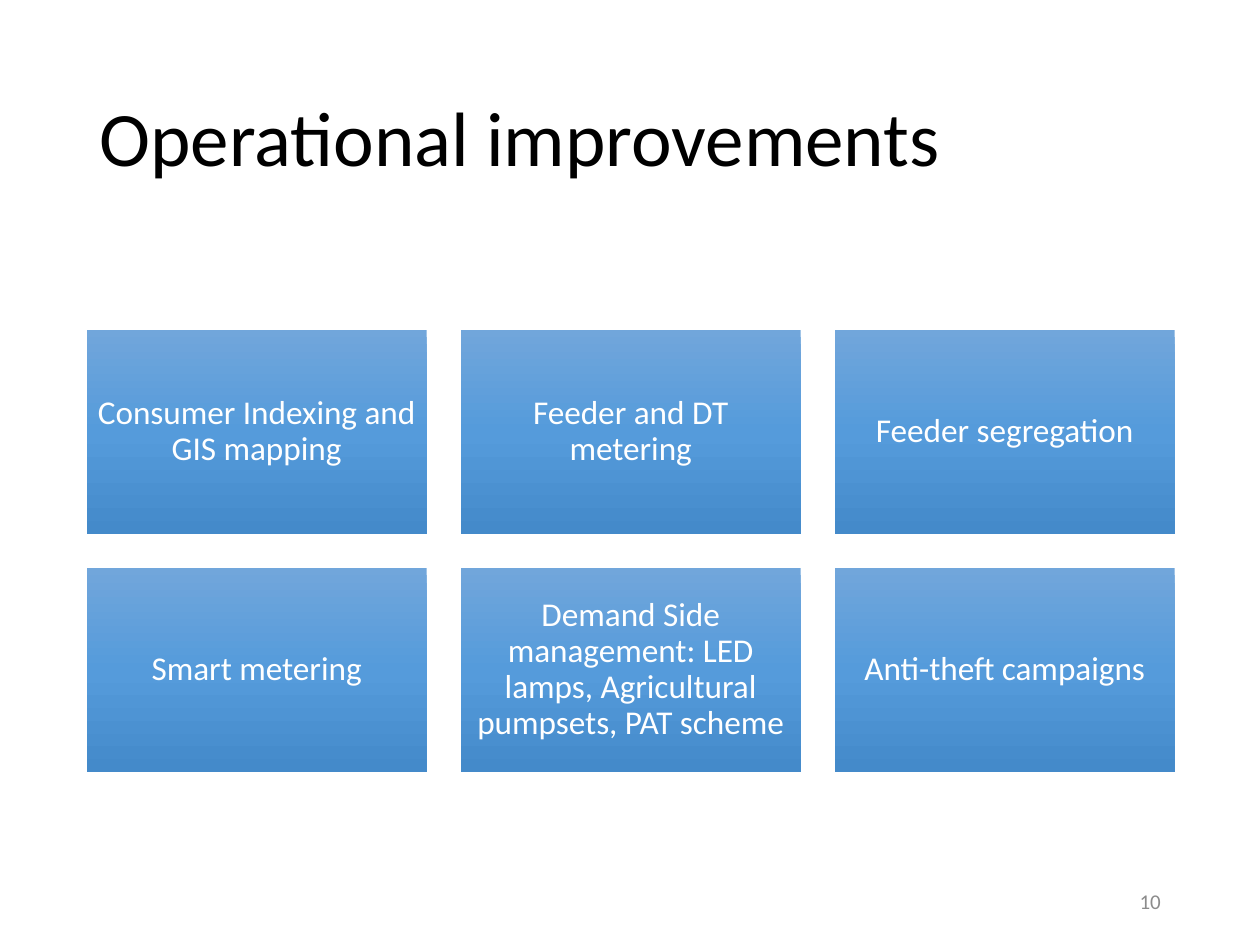
from copy import deepcopy

from pptx import Presentation
from pptx.dml.color import RGBColor
from pptx.enum.shapes import MSO_SHAPE
from pptx.enum.text import MSO_ANCHOR, PP_ALIGN
from pptx.oxml.ns import qn
from pptx.util import Cm, Pt

RECTANGLE = MSO_SHAPE.RECTANGLE
MIDDLE = MSO_ANCHOR.MIDDLE
LEFT, CENTER, RIGHT = PP_ALIGN.LEFT, PP_ALIGN.CENTER, PP_ALIGN.RIGHT

MEASURES = [
    ["Consumer Indexing and GIS mapping", "Feeder and DT metering", "Feeder segregation"],
    [
        "Smart metering",
        "Demand Side management: LED lamps, Agricultural pumpsets, PAT scheme",
        "Anti-theft campaigns",
    ],
]
GRADIENT = [(0, "71A6DB"), (0.5, "559BDB"), (1, "448ACA")]
GRID_LEFT, GRID_TOP = 1.75, 6.65
BOX_WIDTH, BOX_HEIGHT, GAP = 6.85, 4.11, 0.69
INSET = Cm(0.2)


def color(hex_string):
    return RGBColor.from_string(hex_string)


def write(shape, text, size, hex_string, alignment, line_spacing=1.0, **frame_format):
    frame = shape.text_frame
    frame.text = text
    frame_values = {"word_wrap": True, "vertical_anchor": MIDDLE, **frame_format}
    for name, value in frame_values.items():
        setattr(frame, name, value)
    paragraph = frame.paragraphs[0]
    paragraph.alignment = alignment
    paragraph.line_spacing = line_spacing
    for name, value in {"name": "Calibri", "size": Pt(size)}.items():
        setattr(paragraph.font, name, value)
    paragraph.font.color.rgb = color(hex_string)


presentation = Presentation()
presentation.slide_width, presentation.slide_height = Cm(25.4), Cm(19.05)
slide = presentation.slides.add_slide(presentation.slide_layouts[5])

# Title
title = slide.shapes.title
title_place = {"left": Cm(1.75), "top": Cm(1.02), "width": Cm(21.9), "height": Cm(3.68)}
for name, value in title_place.items():
    setattr(title, name, value)
write(title, "Operational improvements", 44, "000000", LEFT, 0.9)

# Grid of measures
insets = {f"margin_{side}": INSET for side in ("left", "top", "right", "bottom")}
for row, texts in enumerate(MEASURES):
    for column, text in enumerate(texts):
        box = slide.shapes.add_shape(
            RECTANGLE,
            Cm(GRID_LEFT + column * (BOX_WIDTH + GAP)),
            Cm(GRID_TOP + row * (BOX_HEIGHT + GAP)),
            Cm(BOX_WIDTH),
            Cm(BOX_HEIGHT),
        )
        box.shadow.inherit = False
        box.line.fill.background()
        box.fill.gradient()
        box.fill.gradient_angle = 270
        # A new gradient has two stops; add the third
        stop_list = box.element.spPr.find(qn("a:gradFill")).find(qn("a:gsLst"))
        stop_list.append(deepcopy(stop_list[0]))
        for stop, (position, hex_string) in zip(box.fill.gradient_stops, GRADIENT):
            stop.position = position
            stop.color.rgb = color(hex_string)
        write(box, text, 19, "FFFFFF", CENTER, 0.9, **insets)

# Slide number
number = slide.shapes.add_textbox(Cm(17.93), Cm(17.65), Cm(5.72), Cm(1.02))
write(number, "10", 12, "8C8C8C", RIGHT)

presentation.save("out.pptx")
